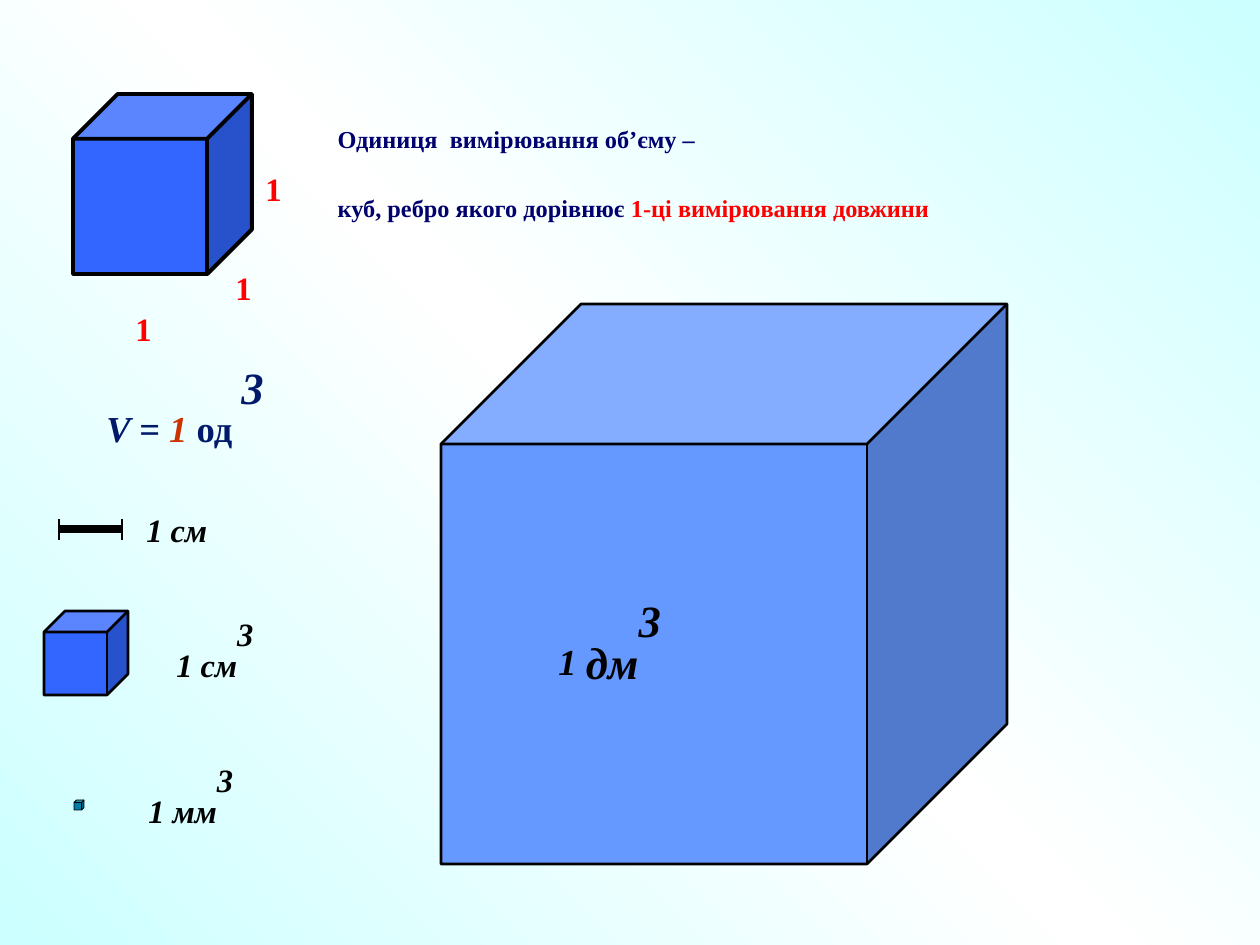
from copy import deepcopy

from pptx import Presentation
from pptx.dml.color import RGBColor
from pptx.enum.shapes import MSO_CONNECTOR, MSO_SHAPE
from pptx.enum.text import MSO_ANCHOR, MSO_AUTO_SIZE, PP_ALIGN
from pptx.oxml.ns import qn
from pptx.util import Pt
from lxml.etree import SubElement

PX = 914400 / 126
FONT = "Times New Roman"
BLACK = RGBColor(0x00, 0x00, 0x00)
WHITE = RGBColor(0xFF, 0xFF, 0xFF)
RED = RGBColor(0xFF, 0x00, 0x00)
RUST = RGBColor(0xCC, 0x33, 0x00)
NAVY = RGBColor(0x00, 0x00, 0x6E)
FORMULA_BLUE = RGBColor(0x00, 0x19, 0x6A)
CYAN = RGBColor(0xCC, 0xFF, 0xFF)
CUBE_BLUE = RGBColor(0x33, 0x66, 0xFF)
CUBE_TEAL = RGBColor(0x00, 0x7C, 0xA8)
CUBE_LIGHT = RGBColor(0x66, 0x99, 0xFF)
LOWERED, RAISED = -25, 30


def px(*lengths):
    return [round(length * PX) for length in lengths]


def add_run(paragraph, text, size, color, italic=False, baseline=LOWERED):
    run = paragraph.add_run()
    run.text = text
    run.font.name = FONT
    run.font.size = Pt(size)
    run.font.bold = True
    run.font.italic = italic
    run.font.color.rgb = color
    run.font._element.set("baseline", str(baseline * 1000))


prs = Presentation()
prs.slide_width, prs.slide_height = px(1260, 945)
slide = prs.slides.add_slide(prs.slide_layouts[5])

# Background: cyan corners with a white diagonal band
background = slide.background.fill
background.gradient()
background.gradient_angle = 45
for stop, position in zip(background.gradient_stops, (0, 1)):
    stop.color.rgb = CYAN
    stop.position = position
stops = slide.element.find(".//" + qn("a:gsLst"))
stops.insert(1, deepcopy(stops[0]))
middle = background.gradient_stops[1]
middle.color.rgb = WHITE
middle.position = 0.5

# Definition of the unit of volume
definition = slide.shapes.title
definition.left, definition.top, definition.width, definition.height = px(325, 78, 798, 184)
frame = definition.text_frame
frame.word_wrap = True
frame.auto_size = MSO_AUTO_SIZE.NONE
frame.vertical_anchor = MSO_ANCHOR.TOP
statement = [
    [("Одиниця  вимірювання об’єму –", NAVY)],
    [("куб, ребро якого дорівнює ", NAVY), ("1-ці вимірювання довжини", RED)],
]
for number, parts in enumerate(statement):
    paragraph = frame.add_paragraph() if number else frame.paragraphs[0]
    paragraph.alignment = PP_ALIGN.LEFT
    paragraph.line_spacing = 1.2
    for text, color in parts:
        add_run(paragraph, text, 24, color)

# Cubes: unit, centimetre, millimetre, decimetre
for left, top, width, height, color, outline in [
    (73, 94, 179, 180, CUBE_BLUE, 2.25),
    (44, 611, 84, 84, CUBE_BLUE, 1.5),
    (74, 800, 10, 10, CUBE_TEAL, 0.5),
    (441, 304, 566, 560, CUBE_LIGHT, 1.5),
]:
    cube = slide.shapes.add_shape(MSO_SHAPE.CUBE, *px(left, top, width, height))
    cube.shadow.inherit = False
    cube.fill.solid()
    cube.fill.fore_color.rgb = color
    cube.line.color.rgb = BLACK
    cube.line.width = Pt(outline)

# Centimetre segment with end ticks
for x1, y1, x2, y2, weight in [
    (59, 529, 122, 529, 4.5),
    (59, 519, 59, 540, 0.75),
    (122, 519, 122, 540, 0.75),
]:
    segment = slide.shapes.add_connector(MSO_CONNECTOR.STRAIGHT, *px(x1, y1, x2, y2))
    segment.line.color.rgb = BLACK
    segment.line.width = Pt(weight)
    SubElement(segment._element.spPr, qn("a:effectLst"))

# Edge lengths, unit labels and the volume formula
edge = [("1", 32, RED)]
labels = [
    (123, 265, 50, 72, edge),
    (223, 224, 50, 72, edge),
    (253, 125, 50, 72, edge),
    (134, 466, 132, 81, [("1 см", 32, BLACK, True)]),
    (164, 601, 150, 81, [("1 см", 32, BLACK, True), ("3", 32, BLACK, True, RAISED)]),
    (136, 747, 178, 81, [("1 мм", 32, BLACK, True), ("3", 32, BLACK, True, RAISED)]),
    (546, 577, 192, 106, [("1 ", 36, BLACK, True), ("дм", 44, BLACK, True),
                          ("3", 44, BLACK, True, RAISED)]),
    (94, 344, 286, 108, [("V = ", 36, FORMULA_BLUE, True), ("1 ", 36, RUST, True),
                         ("од ", 36, FORMULA_BLUE), ("3", 44, FORMULA_BLUE, True, RAISED)]),
]
for left, top, width, height, parts in labels:
    label = slide.shapes.add_textbox(*px(left, top, width, height))
    label.text_frame.word_wrap = True
    for part in parts:
        add_run(label.text_frame.paragraphs[0], *part)

prs.save("out.pptx")
